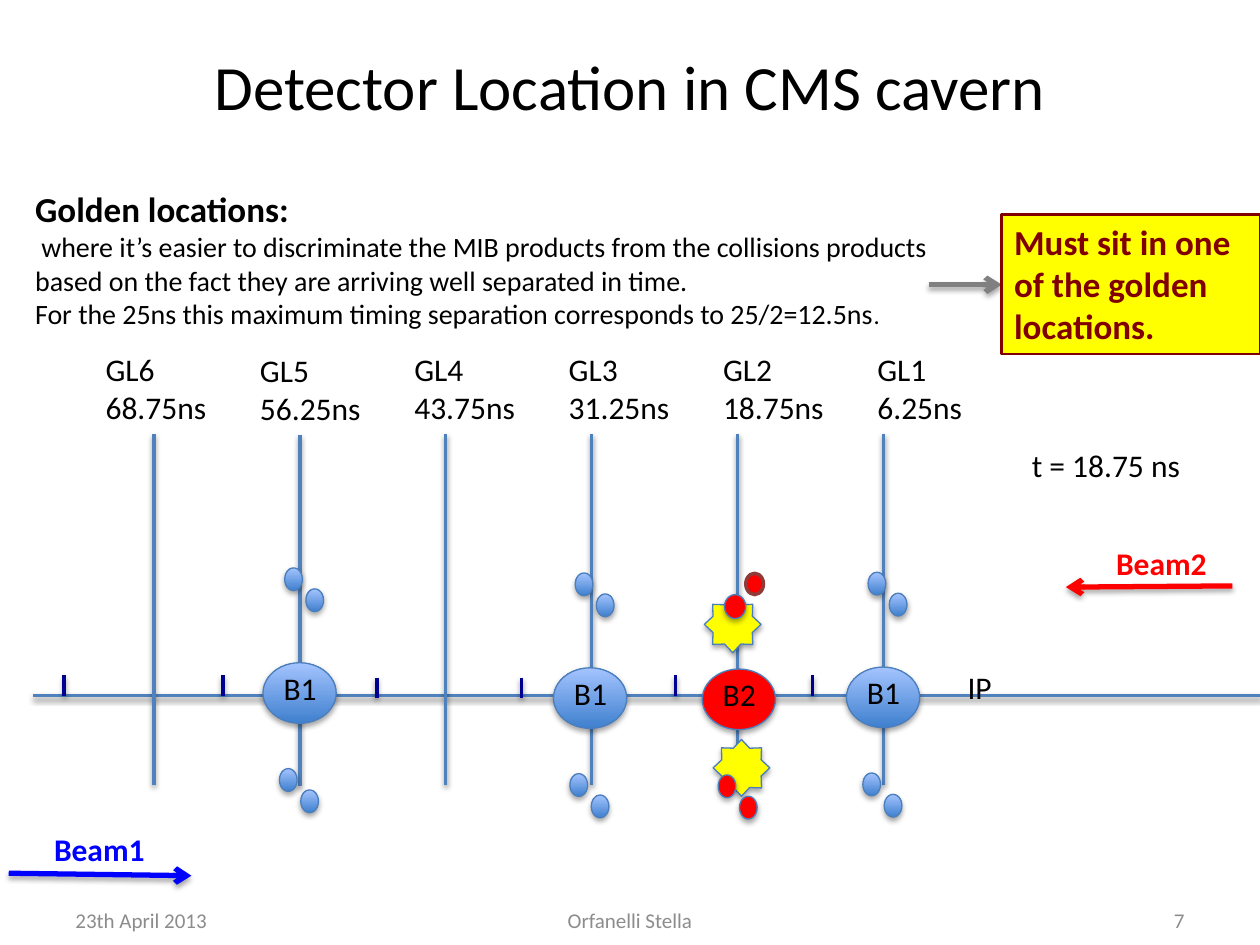
from lxml import etree
from pptx import Presentation
from pptx.dml.color import RGBColor
from pptx.enum.shapes import MSO_CONNECTOR, MSO_SHAPE
from pptx.enum.text import MSO_ANCHOR, PP_ALIGN
from pptx.oxml.ns import qn
from pptx.util import Pt

LINE = MSO_CONNECTOR.STRAIGHT
RECT, OVAL, STAR = MSO_SHAPE.RECTANGLE, MSO_SHAPE.OVAL, MSO_SHAPE.STAR_8_POINT
LEFT, MID, RIGHT = PP_ALIGN.LEFT, PP_ALIGN.CENTER, PP_ALIGN.RIGHT
TOP, CENTRE = MSO_ANCHOR.TOP, MSO_ANCHOR.MIDDLE

HUES = {
    "black": "000000", "grey": "8C8C8C", "arrow": "808080", "axis": "4F81BD",
    "tick": "000090", "edge": "4B7EBC", "deep": "3F80CE", "pale": "A4C4FF",
    "red": "FF0000", "rust": "8E3B39", "blue": "0000FF", "gold": "FFFF00",
    "wine": "800000",
}


def hue(name):
    return RGBColor.from_string(HUES[name])


class Deck:
    font = "Calibri"

    def __init__(self, wide, high):
        self.file = Presentation()
        self.file.slide_width, self.file.slide_height = Pt(wide), Pt(high)
        self.slide = self.file.slides.add_slide(self.file.slide_layouts[5])

    def shade(self, item, alpha=35, dist=1.8):
        """Give a soft drop shadow, or none when alpha is 0."""
        box = etree.SubElement(item._element.spPr, qn("a:effectLst"))
        if alpha:
            drop = etree.SubElement(
                box, qn("a:outerShdw"), blurRad=str(Pt(3.1)),
                dist=str(Pt(dist)), dir="5400000", rotWithShape="0")
            tint = etree.SubElement(drop, qn("a:srgbClr"), val=HUES["black"])
            etree.SubElement(tint, qn("a:alpha"), val=str(alpha * 1000))

    def style(self, para, size, color="black", bold=False, align=LEFT):
        para.alignment = align
        for run in para.runs:
            font = run.font
            font.name, font.size, font.bold = self.font, Pt(size), bold
            font.color.rgb = hue(color)

    def title(self, words, x, y, w, h, size):
        item = self.slide.shapes.title
        item.left, item.top, item.width, item.height = map(Pt, (x, y, w, h))
        item.text_frame.text = words
        item.text_frame.vertical_anchor = CENTRE
        self.style(item.text_frame.paragraphs[0], size, align=MID)

    def text(self, words, x, y, w, h, size=18, anchor=TOP, **look):
        item = self.slide.shapes.add_textbox(Pt(x), Pt(y), Pt(w), Pt(h))
        frame = item.text_frame
        frame.word_wrap, frame.vertical_anchor = True, anchor
        frame.text = words
        for para in frame.paragraphs:
            self.style(para, size, **look)
        return frame

    def line(self, x1, y1, x2, y2, color="axis", width=2, arrow=False):
        item = self.slide.shapes.add_connector(
            LINE, Pt(x1), Pt(y1), Pt(x2), Pt(y2))
        item.line.color.rgb, item.line.width = hue(color), Pt(width)
        if arrow:
            edge = item._element.spPr.find(qn("a:ln"))
            etree.SubElement(edge, qn("a:tailEnd"), type="arrow")
            self.shade(item)
        else:
            self.shade(item, 38, 1.6)

    def shape(self, kind, x, y, w, h, fill=None, edge="edge", width=0.75,
              alpha=35):
        """Draw a preset shape; without a fill it gets the blue gradient."""
        item = self.slide.shapes.add_shape(kind, Pt(x), Pt(y), Pt(w), Pt(h))
        if fill:
            item.fill.solid()
            item.fill.fore_color.rgb = hue(fill)
        else:
            item.fill.gradient()
            item.fill.gradient_angle = 90
            for stop, name in zip(item.fill.gradient_stops, ("deep", "pale")):
                stop.color.rgb = hue(name)
        item.line.color.rgb, item.line.width = hue(edge), Pt(width)
        self.shade(item, alpha)
        return item

    def bunch(self, name, x, y, fill=None):
        self.shape(OVAL, x, y, 41.8, 34.6, fill)
        self.text(name, x + 4.6, y, 37.4, 28.8)

    def dot(self, x, y, fill=None, w=10.1, h=13, **look):
        self.shape(OVAL, x, y, w, h, fill, **look)


def main():
    deck = Deck(720, 540)
    deck.title("Detector Location in CMS cavern", 92.9, 0, 534.2, 97.2, 36)

    # Beam axis, golden location lines and their labels
    deck.line(18.7, 397.4, 720, 397.4)
    times = ("68.75", "56.25", "43.75", "31.25", "18.75", "6.25")
    for i, time in enumerate(times):
        x = 87.9 + 83.4 * i
        drop = 0.7 if i == 1 else 0
        deck.line(x, 248 + drop, x, 448.6 + drop)
        deck.text(f"GL{6 - i}\n{time}ns", 53.3 + 88.2 * i, 196.6 + drop,
                  88.6, 51.1)
    deck.text("t = 18.75 ns", 582.5, 251.3, 101.5, 28.8)

    # Ticks on the axis
    for x, y in ((36.7, 386), (127.4, 386), (215.3, 387.4), (298.1, 387.4),
                 (385.9, 386), (464.4, 386)):
        deck.line(x, y, x, y + 11.5, "tick")
    deck.text("IP", 545.8, 378, 36.7, 28.8)

    # Beam directions
    deck.line(704.2, 334.8, 609.1, 335.5, "red", 3, arrow=True)
    deck.text("Beam2", 630.7, 307.4, 89.3, 28.8, color="red", bold=True)
    deck.line(5, 499, 109.4, 500.4, "blue", 3, arrow=True)
    deck.text("Beam1", 23.8, 470.9, 86.4, 28.8, color="blue", bold=True)

    # Bunch of beam 2 with its hits
    for x, y in ((402.5, 340.6), (407.5, 422.6)):
        deck.shape(STAR, x, y, 32.4, 32.4, "gold")
    deck.bunch("B2", 401.3, 382.3, "red")
    deck.dot(410.4, 442.8, "red")
    deck.dot(422.6, 455, "red")
    deck.dot(414, 339.8, "red", 12.2, 13.7)
    deck.dot(426.2, 327.6, "red", 10.1, 12.2, edge="rust", width=2, alpha=0)

    # Bunches of beam 1 with their particles
    spots = ((9.4, 60.5), (21.6, 72.7), (12.4, -54.2), (24.5, -42.2))
    for x, y in ((150.3, 378.7), (316.3, 381.6), (483.7, 381.2)):
        deck.bunch("B1", x, y)
        for dx, dy in spots:
            deck.dot(x + dx, y + dy)

    # Explanation
    frame = deck.text(
        "Golden locations:\n"
        " where it’s easier to discriminate the MIB products from the "
        "collisions products based on the fact they are arriving well "
        "separated in time.\n"
        "For the 25ns this maximum timing separation corresponds to "
        "25/2=12.5ns", 13, 103.7, 527.8, 90, 16)
    head, last = frame.paragraphs[0], frame.paragraphs[-1]
    deck.style(head, 20, bold=True)
    last.add_run().text = "."
    deck.style(last, 16)
    last.runs[-1].font.size = Pt(14)

    # Conclusion
    deck.line(530.6, 162.7, 572.4, 162.7, "arrow", 3, arrow=True)
    note = deck.shape(RECT, 572.4, 122.4, 147.6, 79.9, "gold", "wine", 1.5, 0)
    note.text_frame.word_wrap = True
    note.text_frame.vertical_anchor = TOP
    note.text_frame.text = "Must sit in one of the golden locations."
    deck.style(note.text_frame.paragraphs[0], 20, "wine", True)

    # Footer
    for words, x, w, align in (("23th April 2013", 36, 168, LEFT),
                               ("Orfanelli Stella", 246, 228, MID),
                               ("7", 516, 168, RIGHT)):
        deck.text(words, x, 511.2, w, 28.8, 12, CENTRE, color="grey",
                  align=align)

    deck.file.save("out.pptx")


if __name__ == "__main__":
    main()
